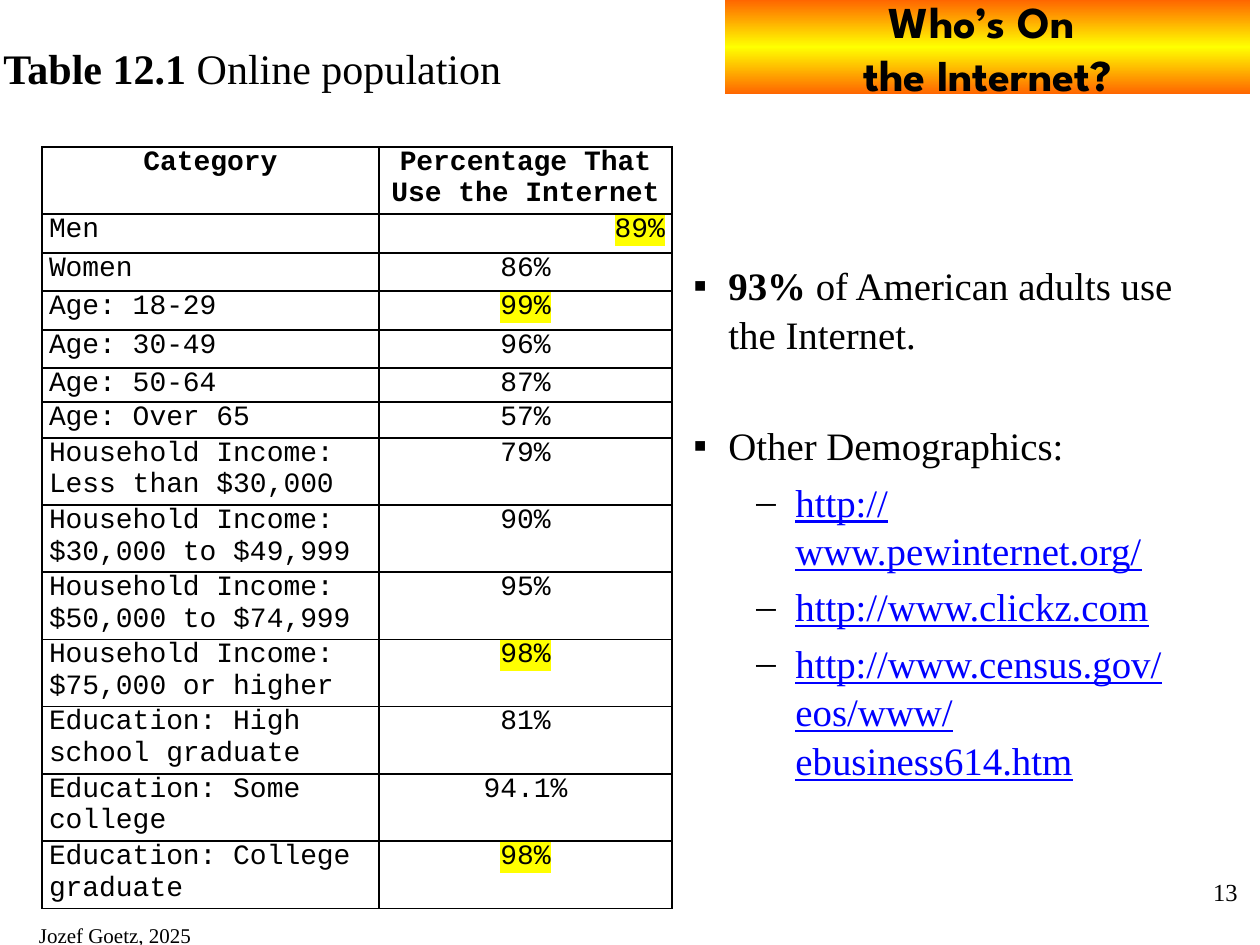
from copy import deepcopy

from lxml.etree import SubElement
from pptx import Presentation
from pptx.dml.color import RGBColor
from pptx.enum.text import MSO_ANCHOR, MSO_AUTO_SIZE, PP_ALIGN
from pptx.oxml.ns import qn
from pptx.util import Emu, Pt

BLACK = RGBColor(0x00, 0x00, 0x00)
BLUE = RGBColor(0x00, 0x00, 0xFF)
ORANGE = RGBColor(0xFF, 0x66, 0x00)
YELLOW = RGBColor(0xFF, 0xFF, 0x00)
SERIF, MONO, DISPLAY = "Times New Roman", "Courier New", "League Spartan"

# Category, percentage, row height
POPULATION = [
    ("Category", "Percentage That Use the Internet", 63),
    ("Men", "89%", 39),
    ("Women", "86%", 38),
    ("Age: 18-29", "99%", 39),
    ("Age: 30-49", "96%", 38),
    ("Age: 50-64", "87%", 32),
    ("Age: Over 65", "57%", 36),
    ("Household Income: Less than $30,000", "79%", 63),
    ("Household Income: $30,000 to $49,999", "90%", 63),
    ("Household Income: $50,000 to $74,999", "95%", 63),
    ("Household Income: $75,000 or higher", "98%", 63),
    ("Education: High school graduate", "81%", 63),
    ("Education: Some college", "94.1%", 63),
    ("Education: College graduate", "98%", 63),
]
HIGHLIGHTED = {"89%", "98%", "99%"}
LINKS = [
    "http://www.pewinternet.org/",
    "http://www.clickz.com",
    "http://www.census.gov/eos/www/ebusiness614.htm",
]


def px(length):
    return Emu(round(length * 914400 / 126))


def format_run(run, name, size, bold=False, color=BLACK, underline=False):
    font = run.font
    font.name, font.size, font.bold = name, Pt(size), bold
    font.color.rgb = color
    if underline:
        font.underline = True


def highlight(run):
    latin = run.font._element.find(qn("a:latin"))
    mark = SubElement(run.font._element, qn("a:highlight"))
    SubElement(mark, qn("a:srgbClr"), val=str(YELLOW))
    latin.addprevious(mark)


def add_text(slide, box, runs, size, align=PP_ALIGN.LEFT):
    """Text box with one line made of (text, bold) runs."""
    frame = slide.shapes.add_textbox(*map(px, box)).text_frame
    frame.word_wrap = True
    line = frame.paragraphs[0]
    line.alignment = align
    for text, bold in runs:
        run = line.add_run()
        run.text = text
        format_run(run, SERIF, size, bold)
    return frame


def set_bullet(paragraph, symbol, margin, hang):
    properties = paragraph._p.get_or_add_pPr()
    properties.set("marL", str(px(margin)))
    properties.set("indent", str(-px(hang)))
    color = SubElement(properties, qn("a:buClr"))
    SubElement(color, qn("a:srgbClr"), val=str(BLACK))
    SubElement(properties, qn("a:buFont"), typeface=SERIF)
    SubElement(properties, qn("a:buChar"), char=symbol)
    paragraph.line_spacing = 1.04


def add_title(slide):
    title = slide.shapes.title
    title.left, title.top, title.width, title.height = map(px, (725, 0, 525, 94))
    # Orange to yellow and back
    title.fill.gradient()
    title.fill.gradient_angle = 90
    stops = title.fill.gradient_stops
    first = stops[0]._gs
    first.addnext(deepcopy(first))
    for stop, color, position in zip(
        title.fill.gradient_stops, (ORANGE, YELLOW, ORANGE), (0, 0.5, 1)
    ):
        stop.color.rgb = color
        stop.position = position
    frame = title.text_frame
    frame.text = "Who’s On \vthe Internet?"
    frame.auto_size = MSO_AUTO_SIZE.NONE
    frame.vertical_anchor = MSO_ANCHOR.MIDDLE
    heading = frame.paragraphs[0]
    heading.alignment = PP_ALIGN.CENTER
    for run in heading.runs:
        format_run(run, DISPLAY, 25.2, True)


def set_borders(cell):
    properties = cell._tc.get_or_add_tcPr()
    for side in ("lnL", "lnR", "lnT", "lnB"):
        line = SubElement(properties, qn(f"a:{side}"), w=str(Pt(1)))
        fill = SubElement(line, qn("a:solidFill"))
        SubElement(fill, qn("a:srgbClr"), val=str(BLACK))


def fill_cell(cell, text, align, bold):
    set_borders(cell)
    cell.fill.background()
    cell.margin_left = cell.margin_right = px(7)
    cell.margin_top = cell.margin_bottom = 0
    cell.text = text
    entry = cell.text_frame.paragraphs[0]
    entry.alignment = align
    format_run(entry.runs[0], MONO, 16, bold)
    if text in HIGHLIGHTED:
        highlight(entry.runs[0])


def add_population_table(slide):
    height = sum(row[2] for row in POPULATION)
    table = slide.shapes.add_table(
        len(POPULATION), 2, px(42), px(147), px(630), px(height)
    ).table
    table.first_row = table.horz_banding = False
    table.columns[0].width, table.columns[1].width = px(337), px(293)
    for index, (category, share, row_height) in enumerate(POPULATION):
        header = index == 0
        table.rows[index].height = px(row_height)
        category_align = PP_ALIGN.CENTER if header else PP_ALIGN.LEFT
        share_align = PP_ALIGN.RIGHT if category == "Men" else PP_ALIGN.CENTER
        fill_cell(table.cell(index, 0), category, category_align, header)
        fill_cell(table.cell(index, 1), share, share_align, header)


def add_facts(slide):
    facts = [("93%", True), (" of American adults use the Internet.", False)]
    frame = add_text(slide, (681, 254, 536, 514), facts, 22.2)
    set_bullet(frame.paragraphs[0], "▪", 35, 35)

    demographics = frame.add_paragraph()
    demographics.text = "Other Demographics:"
    set_bullet(demographics, "▪", 35, 35)
    demographics.space_before = Pt(36)
    format_run(demographics.runs[0], SERIF, 22.2)

    for address in LINKS:
        link = frame.add_paragraph()
        link.text = address
        link.level = 1
        set_bullet(link, "–", 102, 39)
        link.space_before = Pt(4.5)
        format_run(link.runs[0], SERIF, 22.2, color=BLUE, underline=True)


def main():
    deck = Presentation()
    deck.slide_width, deck.slide_height = px(1260), px(945)
    slide = deck.slides.add_slide(deck.slide_layouts[5])

    # Heading and table caption
    add_title(slide)
    caption = [("Table 12.1 ", True), ("Online population", False)]
    add_text(slide, (-9, 36, 692, 74), caption, 24)

    # Table on the left, facts on the right
    add_population_table(slide)
    add_facts(slide)

    # Author and page number
    add_text(slide, (-32, 916, 294, 30), [("Jozef Goetz, 2025", False)], 12, PP_ALIGN.CENTER)
    add_text(slide, (1187, 871, 63, 66), [("13", False)], 14, PP_ALIGN.RIGHT)

    deck.save("out.pptx")


if __name__ == "__main__":
    main()
